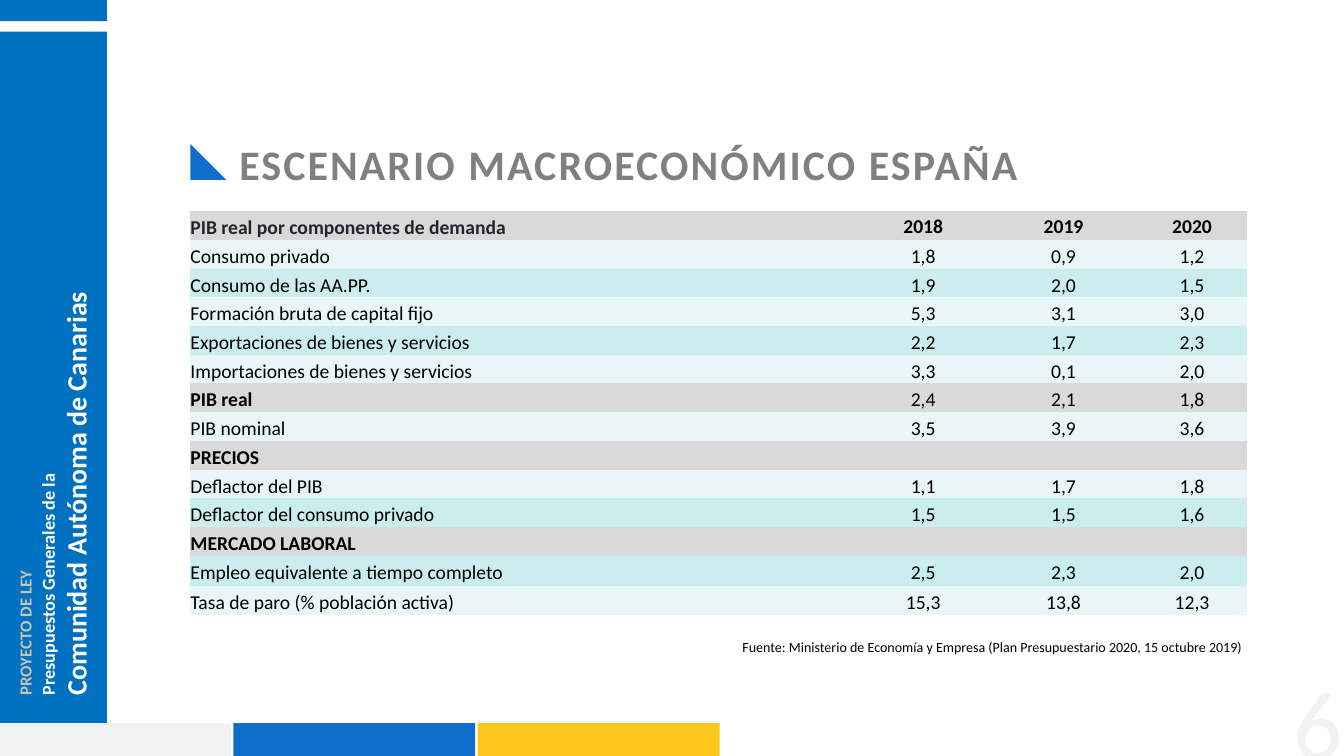
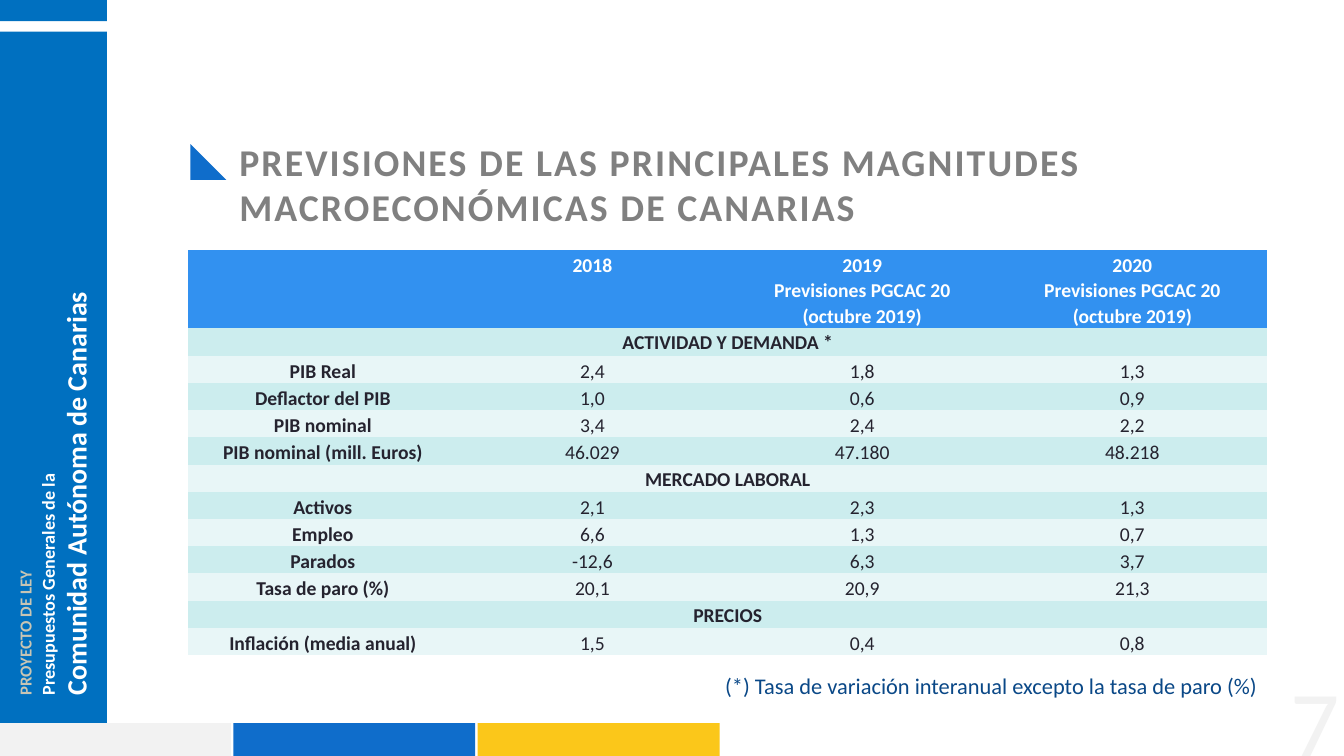
from pptx import Presentation
from pptx.dml.color import RGBColor
from pptx.enum.shapes import MSO_SHAPE
from pptx.enum.text import MSO_ANCHOR, PP_ALIGN
from pptx.util import Emu, Pt

PX = 9144  # 100 px to the inch
FONT = "Calibri"
BAR, BLUE, YELLOW, PALE = "0070C0", "0F6DCB", "FBC71A", "F2F2F2"
GREY, TITLE_GREY, SAND, NAVY = "D9D9D9", "808080", "C8C5B4", "0A4887"
HEADER_BLUE, AQUA, LIGHT_AQUA = "3291F0", "CCEDEE", "E8F6F7"
BLACK, WHITE, INK = "000000", "FFFFFF", "25232F"
NO_STYLE = "{2D5ABB26-0587-4C30-8999-92F81FD0307C}"

SPAIN_ROWS = [
    ("PIB real por componentes de demanda", "2018", "2019", "2020"),
    ("Consumo privado", "1,8", "0,9", "1,2"),
    ("Consumo de las AA.PP.", "1,9", "2,0", "1,5"),
    ("Formación bruta de capital fijo", "5,3", "3,1", "3,0"),
    ("Exportaciones de bienes y servicios", "2,2", "1,7", "2,3"),
    ("Importaciones de bienes y servicios", "3,3", "0,1", "2,0"),
    ("PIB real", "2,4", "2,1", "1,8"),
    ("PIB nominal", "3,5", "3,9", "3,6"),
    ("PRECIOS",),
    ("Deflactor del PIB", "1,1", "1,7", "1,8"),
    ("Deflactor del consumo privado", "1,5", "1,5", "1,6"),
    ("MERCADO LABORAL",),
    ("Empleo equivalente a tiempo completo", "2,5", "2,3", "2,0"),
    ("Tasa de paro (% población activa)", "15,3", "13,8", "12,3"),
]
SPAIN_GREY_ROWS = {0, 6, 8, 11}

FORECAST = "\nPrevisiones PGCAC 20\n(octubre 2019)"
CANARY_ROWS = [
    ("", "2018", "2019" + FORECAST, "2020" + FORECAST),
    ("ACTIVIDAD Y DEMANDA *",),
    ("PIB Real", "2,4", "1,8", "1,3"),
    ("Deflactor del PIB", "1,0", "0,6", "0,9"),
    ("PIB nominal", "3,4", "2,4", "2,2"),
    ("PIB nominal (mill. Euros)", "46.029", "47.180", "48.218"),
    ("MERCADO LABORAL",),
    ("Activos", "2,1", "2,3", "1,3"),
    ("Empleo", "6,6", "1,3", "0,7"),
    ("Parados", "-12,6", "6,3", "3,7"),
    ("Tasa de paro (%)", "20,1", "20,9", "21,3"),
    ("PRECIOS",),
    ("Inflación (media anual)", "1,5", "0,4", "0,8"),
]


def px(length):
    return Emu(length * PX)


def rgb(hex_color):
    return RGBColor.from_string(hex_color)


def fill_shape(slide, box, color, kind=MSO_SHAPE.RECTANGLE):
    shape = slide.shapes.add_shape(kind, *map(px, box))
    shape.shadow.inherit = False
    shape.fill.solid()
    shape.fill.fore_color.rgb = rgb(color)
    shape.line.fill.background()


def style_line(paragraph, size, color, bold=False, align=PP_ALIGN.LEFT, spacing=None):
    font = paragraph.font
    font.name, font.size, font.bold = FONT, Pt(size), bold
    font.color.rgb = rgb(color)
    paragraph.alignment = align
    if spacing:
        paragraph.line_spacing = spacing


def add_text(slide, box, text, *styles, insets=(10, 5, 10, 5), wrap=True,
             anchor=MSO_ANCHOR.TOP, rotation=0, **options):
    """Styles are (size, color) pairs, one for each line of the text."""
    holder = slide.shapes.add_textbox(*map(px, box))
    holder.rotation = rotation
    frame = holder.text_frame
    frame.word_wrap, frame.vertical_anchor = wrap, anchor
    (frame.margin_left, frame.margin_top,
     frame.margin_right, frame.margin_bottom) = map(px, insets)
    frame.text = text
    for paragraph, (size, color) in zip(frame.paragraphs, styles):
        style_line(paragraph, size, color, **options)
    return frame


def add_grid(slide, left, top, widths, heights):
    grid = slide.shapes.add_table(len(heights), len(widths), px(left), px(top),
                                  px(sum(widths)), px(sum(heights))).table
    grid._tbl.tblPr[0].text = NO_STYLE
    grid.first_row = grid.horz_banding = False
    for column, width in zip(grid.columns, widths):
        column.width = px(width)
    for row, height in zip(grid.rows, heights):
        row.height = px(height)
    return grid


def set_cell(cell, text, fill, insets, color, **options):
    cell.fill.solid()
    cell.fill.fore_color.rgb = rgb(fill)
    (cell.margin_left, cell.margin_top,
     cell.margin_right, cell.margin_bottom) = map(px, insets)
    cell.text = text
    for paragraph in cell.text_frame.paragraphs:
        style_line(paragraph, 28, color, **options)


def add_sidebar(slide, left, top, width, height):
    # Blue bar with a white gap near the top
    fill_shape(slide, (left, top + 69, width, height - 69), BAR)
    fill_shape(slide, (left, top, width, 48), BAR)
    # Upward text, framed before its rotation
    add_text(slide, (left - 587, top + 720, 1291, 40), "PROYECTO DE LEY",
             (24, SAND), bold=True, rotation=270, insets=(0, 0, 0, 0))
    add_text(slide, (left - 276, top + 925, 819, 103),
             "Presupuestos Generales de la\nComunidad Autónoma de Canarias",
             (26, WHITE), (40, WHITE), bold=True, rotation=270, insets=(0, 0, 10, 0))


def add_footer_bands(slide, left, top, width, height):
    for index, color in enumerate((PALE, BLUE, YELLOW)):
        fill_shape(slide, (left + index * (width + 5), top, width, height), color)


def add_title(slide, left, top, text, size):
    fill_shape(slide, (left, top + 16, 71, 71), BLUE, MSO_SHAPE.RIGHT_TRIANGLE)
    frame = add_text(slide, (left + 87, top, 2050, 205), text,
                     (size, TITLE_GREY), bold=True)
    frame.paragraphs[0].runs[0]._r.get_or_add_rPr().set("spc", "300")


def add_base_slide(deck, title, title_size, page_number, page_box):
    slide = deck.slides.add_slide(deck.slide_layouts[6])
    add_sidebar(slide, -9, -6, 221, 1520)
    add_footer_bands(slide, -22, 1435, 480, 99)
    add_text(slide, page_box, page_number, (139, PALE), align=PP_ALIGN.RIGHT)
    add_title(slide, 378, 270, title, title_size)
    return slide


def add_spain_table(slide, left, top):
    grid = add_grid(slide, left, top, (1321, 266, 291, 219), [57] * 12 + [60, 57])
    for r, values in enumerate(SPAIN_ROWS):
        is_grey = r in SPAIN_GREY_ROWS
        fill = GREY if is_grey else LIGHT_AQUA if r % 2 else AQUA
        for c in range(4):
            set_cell(grid.cell(r, c), values[c] if c < len(values) else "", fill,
                     (0, 0, 0, 0), INK if r == c == 0 else BLACK,
                     bold=r == 0 or (is_grey and c == 0),
                     align=PP_ALIGN.CENTER if c else PP_ALIGN.LEFT,
                     spacing=1.15 if r == 0 and c else 1.2)


def add_canary_table(slide, left, top):
    grid = add_grid(slide, left, top, (535, 535, 536, 536), [151, 56] + [54] * 11)
    for r, values in enumerate(CANARY_ROWS):
        fill = HEADER_BLUE if r == 0 else AQUA if r % 2 else LIGHT_AQUA
        if len(values) == 1:  # section heading across the table
            grid.cell(r, 0).merge(grid.cell(r, 3))
        for c, value in enumerate(values):
            set_cell(grid.cell(r, c), value, fill, (12, 4, 12, 0),
                     INK if r else WHITE, bold=r == 0 or c == 0,
                     align=PP_ALIGN.CENTER, spacing=1.07)


def build_spain_slide(deck):
    slide = add_base_slide(deck, "ESCENARIO MACROECONÓMICO ESPAÑA", 60,
                           "6", (2557, 1309, 113, 235))
    add_spain_table(slide, 378, 419)
    add_text(slide, (1147, 1262, 1323, 44),
             "Fuente: Ministerio de Economía y Empresa "
             "(Plan Presupuestario 2020, 15 octubre 2019)",
             (20, BLACK), align=PP_ALIGN.RIGHT, insets=(5, 5, 5, 5))


def build_canary_slide(deck):
    slide = add_base_slide(
        deck, "PREVISIONES DE LAS PRINCIPALES MAGNITUDES MACROECONÓMICAS DE CANARIAS",
        54, "7", (2047, 1309, 622, 192))
    add_canary_table(slide, 373, 496)
    add_text(slide, (1428, 1329, 1077, 64),
             "(*) Tasa de variación interanual excepto la tasa de paro (%)",
             (32, NAVY), align=PP_ALIGN.RIGHT, wrap=False, anchor=MSO_ANCHOR.MIDDLE)


def main():
    deck = Presentation()
    deck.slide_width, deck.slide_height = px(2667), px(1500)
    build_spain_slide(deck)
    build_canary_slide(deck)
    deck.save("out.pptx")


if __name__ == "__main__":
    main()
